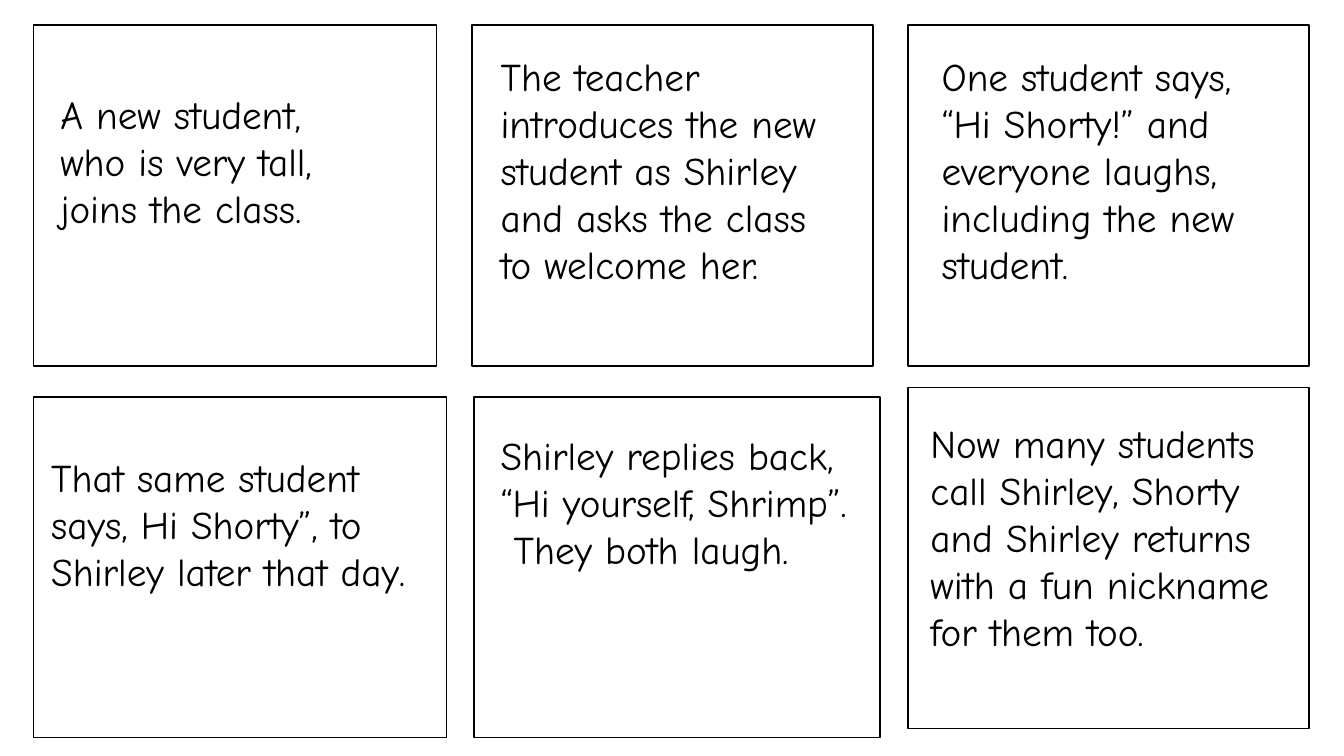
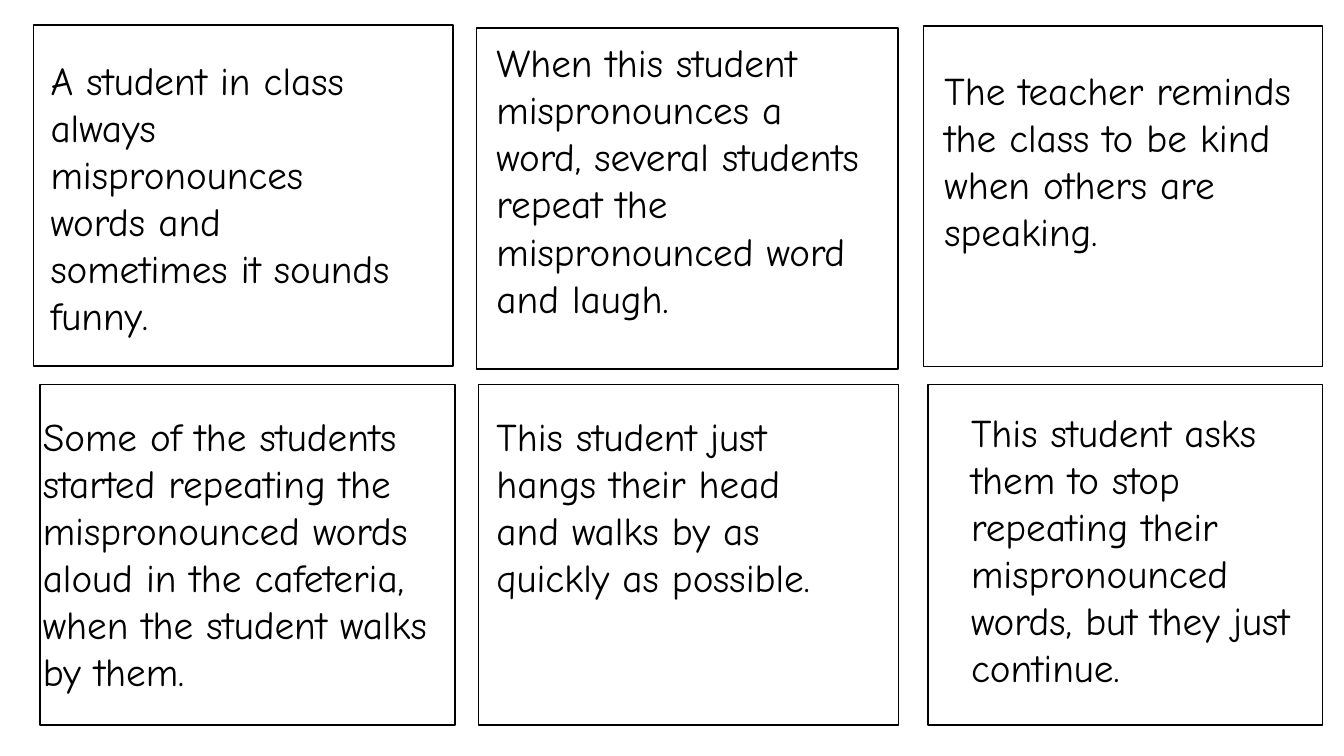
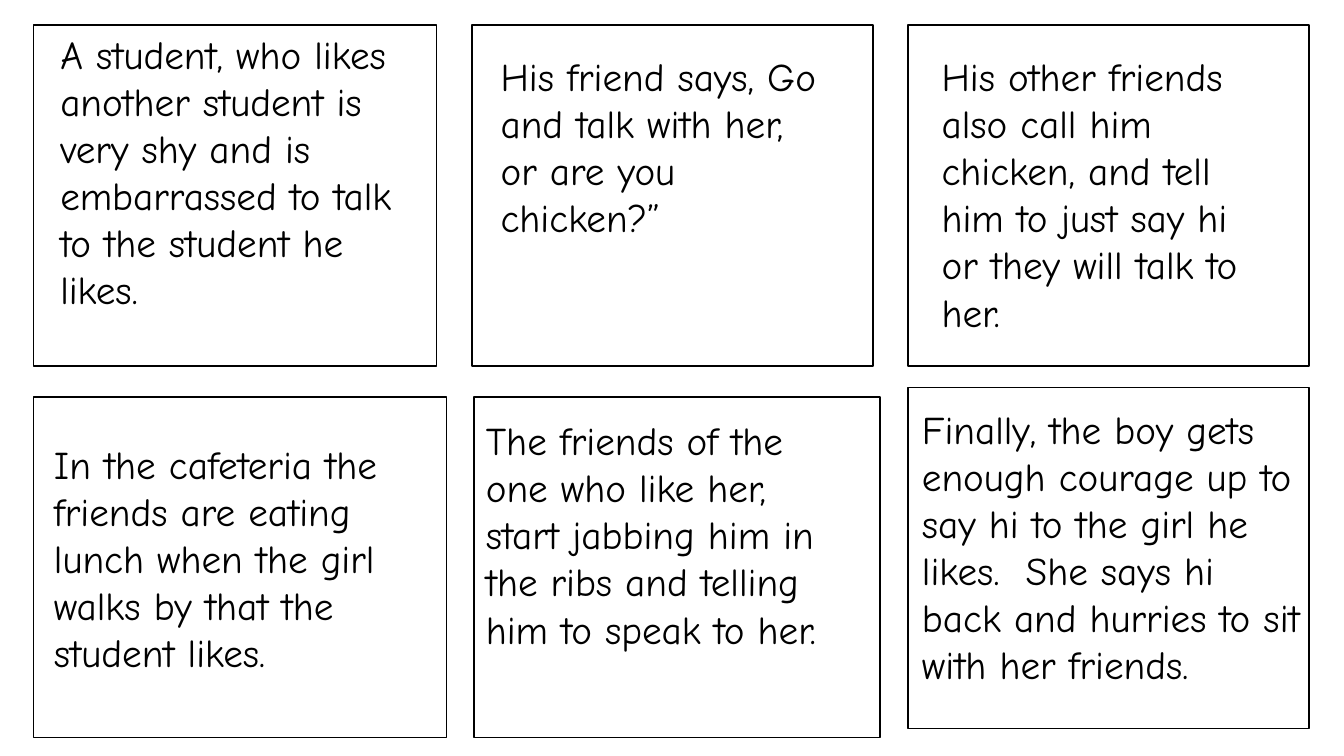
from typing import NamedTuple

from pptx import Presentation
from pptx import util as u
from pptx.dml.color import RGBColor
from pptx.enum import shapes, text
from pptx.slide import Slide

FONT = "Comic Neue"
FONT_SIZE = 28
INK = "000000"
PAPER = "FFFFFF"
FRAME_HEIGHT = 243.5
LINE_HEIGHT = 33.96
TEXT_PADDING = 7.2


class Frame(NamedTuple):
    left: float
    top: float
    width: float


class Caption(NamedTuple):
    left: float
    top: float
    width: float
    lines: int
    words: str


STORY_FRAMES = [
    Frame(24, 18, 288),
    Frame(337, 18, 286.5),
    Frame(648.5, 18, 286.5),
    Frame(24, 283.5, 295),
    Frame(338.5, 283.5, 290),
    Frame(648.5, 277, 286.5),
]
WIDE_FRAMES = [
    Frame(24, 18, 299.5),
    Frame(340.5, 20, 301),
    Frame(659.5, 18.5, 285),
    Frame(28.5, 274.5, 296.5),
    Frame(342, 274.5, 300),
    Frame(663, 274.5, 281.5),
]

NICKNAME_STORY = [
    Caption(36, 61, 234.5, 3, "A new student, who is very tall, joins the class."),
    Caption(350.5, 34, 242, 6,
            "The teacher introduces the new student as Shirley and asks the class to welcome her."),
    Caption(665.5, 34, 245, 5,
            "One student says, “Hi Shorty!” and everyone laughs, including the new student."),
    Caption(29.5, 320.5, 282, 4,
            "That same student says, Hi Shorty”, to Shirley later that day."),
    Caption(350.5, 304.5, 268.5, 4,
            "Shirley replies back, “Hi yourself, Shrimp”.  They both laugh."),
    Caption(657.5, 296, 286.5, 5,
            "Now many students call Shirley, Shorty and Shirley returns with a fun nickname "
            "for them too."),
]
PRONUNCIATION_STORY = [
    Caption(29, 36.5, 267, 6,
            "A student in class always mispronounces words and sometimes it sounds funny."),
    Caption(347.5, 24, 281, 6,
            "When this student mispronounces a word, several students repeat the "
            "mispronounced word and laugh."),
    Caption(667.5, 44, 270.5, 5,
            "The teacher reminds the class to be kind when others are speaking."),
    Caption(23.5, 291, 308, 6,
            "Some of the students started repeating the mispronounced words aloud in the "
            "cafeteria, when the student walks by them."),
    Caption(347.5, 291, 270.5, 4,
            "This student just hangs their head and walks by as quickly as possible."),
    Caption(686.5, 288, 258.5, 6,
            "This student asks them to stop repeating their mispronounced words, but they "
            "just continue."),
]
SHY_STORY = [
    Caption(36, 18, 268.5, 6,
            "A student, who likes another student is very shy and is embarrassed to talk to "
            "the student he likes."),
    Caption(350.5, 34, 242, 4,
            "His friend says, Go and talk with her, or are you chicken?”"),
    Caption(665.5, 34, 245, 6,
            "His other friends also call him chicken, and tell him to just say hi or they "
            "will talk to her."),
    Caption(31.5, 311, 282, 5,
            "In the cafeteria the friends are eating lunch when the girl walks by that the "
            "student likes."),
    Caption(340, 294, 268.5, 6,
            "The friends of the one who like her, start jabbing him in the ribs and telling "
            "him to speak to her."),
    Caption(651.5, 286, 286.5, 6,
            "Finally, the boy gets enough courage up to say hi to the girl he likes.  She "
            "says hi back and hurries to sit with her friends."),
]
STORIES = [
    (STORY_FRAMES, NICKNAME_STORY),
    (WIDE_FRAMES, PRONUNCIATION_STORY),
    (STORY_FRAMES, SHY_STORY),
]


def color(value: str) -> RGBColor:
    return RGBColor.from_string(value)


def draw_frame(slide: Slide, frame: Frame) -> None:
    shape = slide.shapes.add_shape(
        shapes.MSO_SHAPE.RECTANGLE,
        u.Pt(frame.left), u.Pt(frame.top), u.Pt(frame.width), u.Pt(FRAME_HEIGHT))
    shape.shadow.inherit = False
    shape.fill.solid()
    shape.fill.fore_color.rgb = color(PAPER)
    shape.line.color.rgb = color(INK)
    shape.line.width = u.Pt(1)


def draw_caption(slide: Slide, caption: Caption) -> None:
    height = caption.lines * LINE_HEIGHT + TEXT_PADDING
    box = slide.shapes.add_textbox(
        u.Pt(caption.left), u.Pt(caption.top), u.Pt(caption.width), u.Pt(height))
    frame = box.text_frame
    frame.word_wrap = True
    frame.auto_size = text.MSO_AUTO_SIZE.SHAPE_TO_FIT_TEXT
    run = frame.paragraphs[0].add_run()
    run.text = caption.words
    run.font.name = FONT
    run.font.size = u.Pt(FONT_SIZE)
    run.font.color.rgb = color(INK)


def main() -> None:
    presentation = Presentation()
    presentation.slide_width = u.Pt(960)
    presentation.slide_height = u.Pt(540)
    blank_layout = presentation.slide_layouts[6]
    for frames, captions in STORIES:
        slide = presentation.slides.add_slide(blank_layout)
        for frame in frames:
            draw_frame(slide, frame)
        for caption in captions:
            draw_caption(slide, caption)
    presentation.save("out.pptx")


if __name__ == "__main__":
    main()
